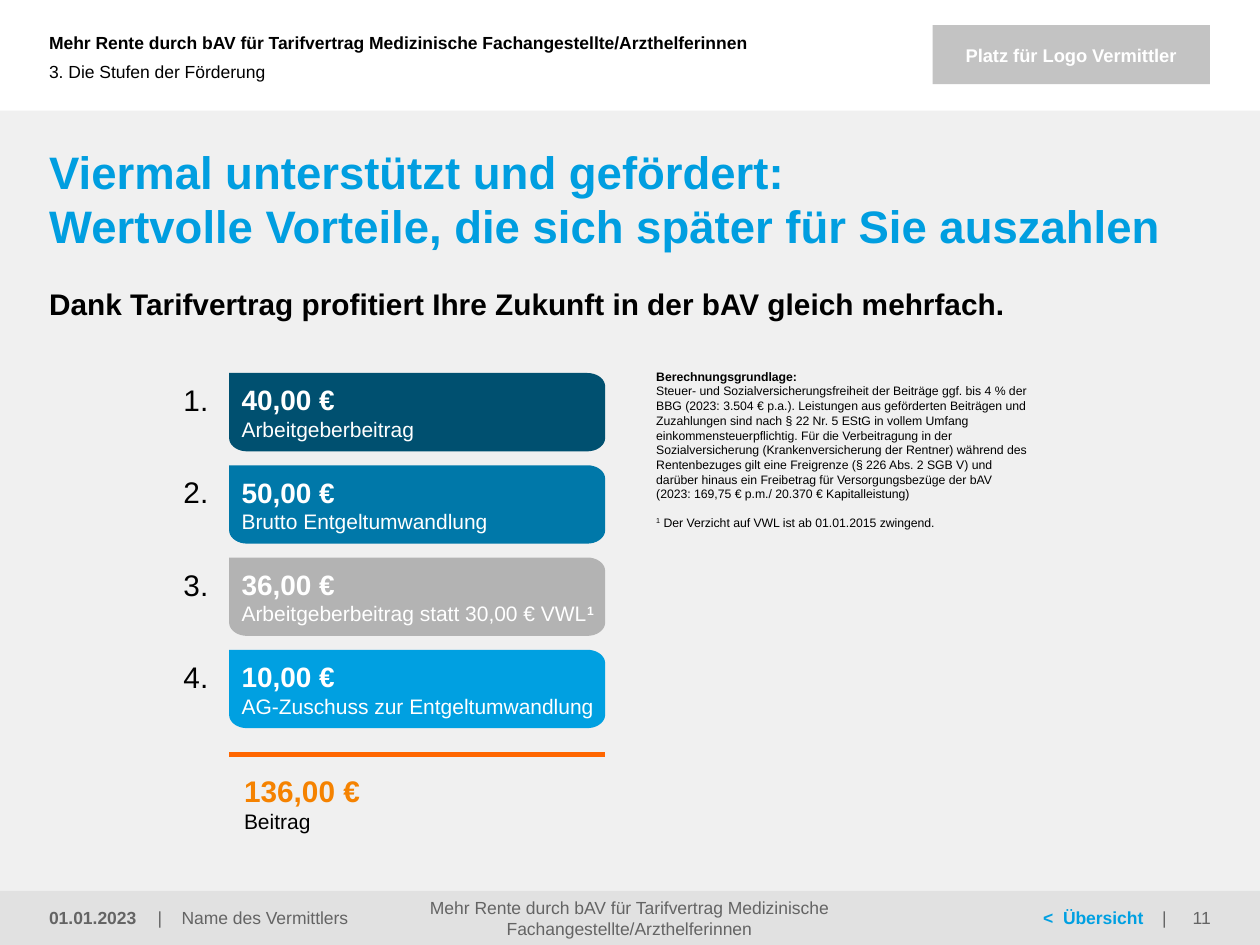
import math
import pptx
import pptx.util
import pptx.dml.color
import pptx.enum.shapes
import pptx.enum.text
import pptx.oxml.ns
from lxml import etree

Cm, Pt = pptx.util.Cm, pptx.util.Pt
ALIGN = pptx.enum.text.PP_ALIGN
ANCHOR = pptx.enum.text.MSO_ANCHOR
RECT = pptx.enum.shapes.MSO_SHAPE.RECTANGLE

THEME = {
    "font": "Arial",
    "panel": "F0F0F0", "footer": "E1E1E1", "logo": "C3C3C3",
    "text": "000000", "muted": "646464", "white": "FFFFFF",
    "title": "009EE0", "link": "00A0E1", "total": "F58200", "rule": "FF6600",
    "bars": ["005070", "0078A9", "B3B3B3", "00A0E1"],
    "size": {"title": 26, "lead": 17, "amount": 16, "label": 12,
             "logo": 10.5, "small": 10, "note": 7},
}

TOPIC = "Mehr Rente durch bAV für Tarifvertrag Medizinische Fachangestellte/Arzthelferinnen"
CHAPTER = "3. Die Stufen der Förderung"
TITLE = "Viermal unterstützt und gefördert:\vWertvolle Vorteile, die sich später für Sie auszahlen"
LEAD = "Dank Tarifvertrag profitiert Ihre Zukunft in der bAV gleich mehrfach."
STEPS = [
    ("40,00 €", "Arbeitgeberbeitrag", ""),
    ("50,00 €", "Brutto Entgeltumwandlung", ""),
    ("36,00 €", "Arbeitgeberbeitrag statt 30,00 € VWL", "1"),
    ("10,00 €", "AG-Zuschuss zur Entgeltumwandlung", ""),
]
TOTAL = ("136,00 €", "Beitrag")
NOTE_HEAD = "Berechnungsgrundlage:"
NOTE = (
    "Steuer- und Sozialversicherungsfreiheit der Beiträge ggf. bis 4 % der BBG "
    "(2023: 3.504 € p.a.). Leistungen aus geförderten Beiträgen und Zuzahlungen sind "
    "nach § 22 Nr. 5 EStG in vollem Umfang einkommensteuerpflichtig. Für die "
    "Verbeitragung in der Sozialversicherung (Krankenversicherung der Rentner) während "
    "des Rentenbezuges gilt eine Freigrenze (§ 226 Abs. 2 SGB V) und darüber hinaus ein "
    "Freibetrag für Versorgungsbezüge der bAV (2023: 169,75 € p.m./ 20.370 € "
    "Kapitalleistung)"
)
FOOTNOTE = " Der Verzicht auf VWL ist ab 01.01.2015 zwingend."

MARGIN = 0.99
FOOT_TOP, FOOT_H = 17.96, 1.09
BAR_X, BAR_Y, BAR_W, BAR_H, BAR_STEP = 4.62, 7.52, 7.58, 1.58, 1.86
RADIUS_X, RADIUS_Y = 0.36, 0.27


def rgb(value):
    return pptx.dml.color.RGBColor.from_string(value)


def run(text, size, color="text", bold=False, raised=False):
    return text, THEME["size"][size], THEME[color], bold, raised


def write(s, paragraphs, align=ALIGN.LEFT, anchor=ANCHOR.TOP, insets=(0, 0, 0, 0)):
    tf = s.text_frame
    tf.word_wrap = True
    tf.auto_size = pptx.enum.text.MSO_AUTO_SIZE.NONE
    tf.vertical_anchor = anchor
    tf.margin_left, tf.margin_top, tf.margin_right, tf.margin_bottom = map(Cm, insets)
    tf.text = "\n".join("".join(r[0] for r in runs) for runs in paragraphs)
    for p, runs in zip(tf.paragraphs, paragraphs):
        p.alignment = align
        if len(runs) > 1:
            p.text = ""
            for item in runs:
                p.add_run().text = item[0]
        styles = runs if len(runs) > 1 else runs * len(p.runs)
        for r, (_, size, color, bold, raised) in zip(p.runs, styles):
            r.font.name, r.font.size, r.font.bold = THEME["font"], Pt(size), bold
            r.font.color.rgb = rgb(color)
            if raised:
                r._r.get_or_add_rPr().set("baseline", "30000")
    return tf


def add_text(slide, box, paragraphs, **layout):
    return write(slide.shapes.add_textbox(*map(Cm, box)), paragraphs, **layout)


def paint(s, color):
    s.shadow.inherit = False
    s.fill.solid()
    s.fill.fore_color.rgb = rgb(color)
    s.line.fill.background()
    return s


def add_rect(slide, box, color):
    return paint(slide.shapes.add_shape(RECT, *map(Cm, box)), color)


def add_tabs(p, stops):
    tabs = etree.SubElement(p._p.get_or_add_pPr(), pptx.oxml.ns.qn("a:tabLst"))
    for stop in stops:
        etree.SubElement(tabs, pptx.oxml.ns.qn("a:tab"), pos=str(Cm(stop)), algn="l")


def add_bar(slide, y, color):
    right, bottom = BAR_X + BAR_W, y + BAR_H
    corners = [
        (right - RADIUS_X, y + RADIUS_Y, -90),
        (right - RADIUS_X, bottom - RADIUS_Y, 0),
        (BAR_X + RADIUS_X, bottom - RADIUS_Y, 90),
    ]
    points = []
    for cx, cy, start in corners:
        for angle in range(start, start + 91, 10):
            a = math.radians(angle)
            points.append((Cm(cx + RADIUS_X * math.cos(a)), Cm(cy + RADIUS_Y * math.sin(a))))
    fb = slide.shapes.build_freeform(Cm(BAR_X), Cm(y))
    fb.add_line_segments(points, close=True)
    return paint(fb.convert_to_shape(), color)


def add_frame(slide):
    middle = ANCHOR.MIDDLE
    padded = (MARGIN, 0.13, 0.25, 0.13)
    add_rect(slide, (0, 2.23, 25.4, 16.82), THEME["panel"])
    add_rect(slide, (0, FOOT_TOP, 25.4, FOOT_H), THEME["footer"])
    add_text(slide, (0, 0, 17.73, 1.7), [[run(TOPIC, "small", bold=True)]],
             anchor=middle, insets=padded)
    add_text(slide, (0, 0.64, 18.16, 1.6), [[run(CHAPTER, "small")]],
             anchor=middle, insets=(MARGIN, 0, 0, 0))
    logo = add_rect(slide, (18.8, 0.51, 5.59, 1.19), THEME["logo"])
    write(logo, [[run("Platz für Logo Vermittler", "logo", "white", True)]],
          align=ALIGN.CENTER, anchor=middle)

    def foot(x, w, runs, **layout):
        return add_text(slide, (x, FOOT_TOP, w, FOOT_H), [runs], anchor=middle, **layout)

    foot(0, 3.1, [run("01.01.2023", "small", "muted", True)], insets=padded)
    name = foot(3.18, 6.15, [run("|\tName des Vermittlers", "small", "muted")])
    add_tabs(name.paragraphs[0], [0.48])
    foot(7.44, 10.49, [run(TOPIC, "small", "muted")], align=ALIGN.CENTER)
    nav = foot(17.48, 6.15, [run("<\tÜbersicht", "small", "link", True),
                             run("\t|", "small", "muted")], insets=(3.55, 0, 0, 0))
    add_tabs(nav.paragraphs[0], [0.4, 2.4])
    foot(23.01, 2.39, [run("11", "small", "muted")], align=ALIGN.RIGHT,
         insets=(0.25, 0.13, MARGIN, 0.13))


def add_steps(slide):
    for i, (amount, label, mark) in enumerate(STEPS):
        y = BAR_Y + i * BAR_STEP
        add_text(slide, (3.7, y + 0.18, 0.64, 0.74), [[run(f"{i + 1}.", "lead")]])
        label_runs = [run(label, "label", "white")]
        if mark:
            label_runs.append(run(mark, "label", "white", True, True))
        write(add_bar(slide, y, THEME["bars"][i]),
              [[run(amount, "amount", "white", True)], label_runs],
              anchor=ANCHOR.MIDDLE, insets=(0.25, 0.13, 0, 0.13))

    rule = slide.shapes.add_connector(pptx.enum.shapes.MSO_CONNECTOR.STRAIGHT,
                                      Cm(BAR_X), Cm(15.21), Cm(BAR_X + BAR_W), Cm(15.21))
    rule.line.color.rgb = rgb(THEME["rule"])
    rule.line.width = Pt(3)
    etree.SubElement(rule._element.spPr, pptx.oxml.ns.qn("a:effectLst"))
    add_text(slide, (BAR_X, 15.57, 6.1, 1.24),
             [[run(TOTAL[0], "lead", "total", True)], [run(TOTAL[1], "label")]],
             anchor=ANCHOR.MIDDLE, insets=(0.3, 0, 0, 0))


def main():
    prs = pptx.Presentation()
    prs.slide_width, prs.slide_height = Cm(25.4), Cm(19.05)
    slide = prs.slides.add_slide(prs.slide_layouts[5])
    add_frame(slide)

    title = slide.shapes.title
    title.left, title.top, title.width, title.height = map(Cm, (MARGIN, 2.9, 23.42, 1.4))
    write(title, [[run(TITLE, "title", "title", True)]])
    slide.shapes._spTree.append(title._element)
    add_text(slide, (MARGIN, 5.77, 23.42, 0.74), [[run(LEAD, "lead", bold=True)]])

    add_steps(slide)
    notes = add_text(slide, (13.23, 7.44, 7.49, 3.2), [
        [run(NOTE_HEAD, "note", bold=True)],
        [run(NOTE, "note")],
        [run("1", "note", raised=True), run(FOOTNOTE, "note")],
    ])
    notes.paragraphs[2].space_before = Pt(8)
    prs.save("out.pptx")


if __name__ == "__main__":
    main()
